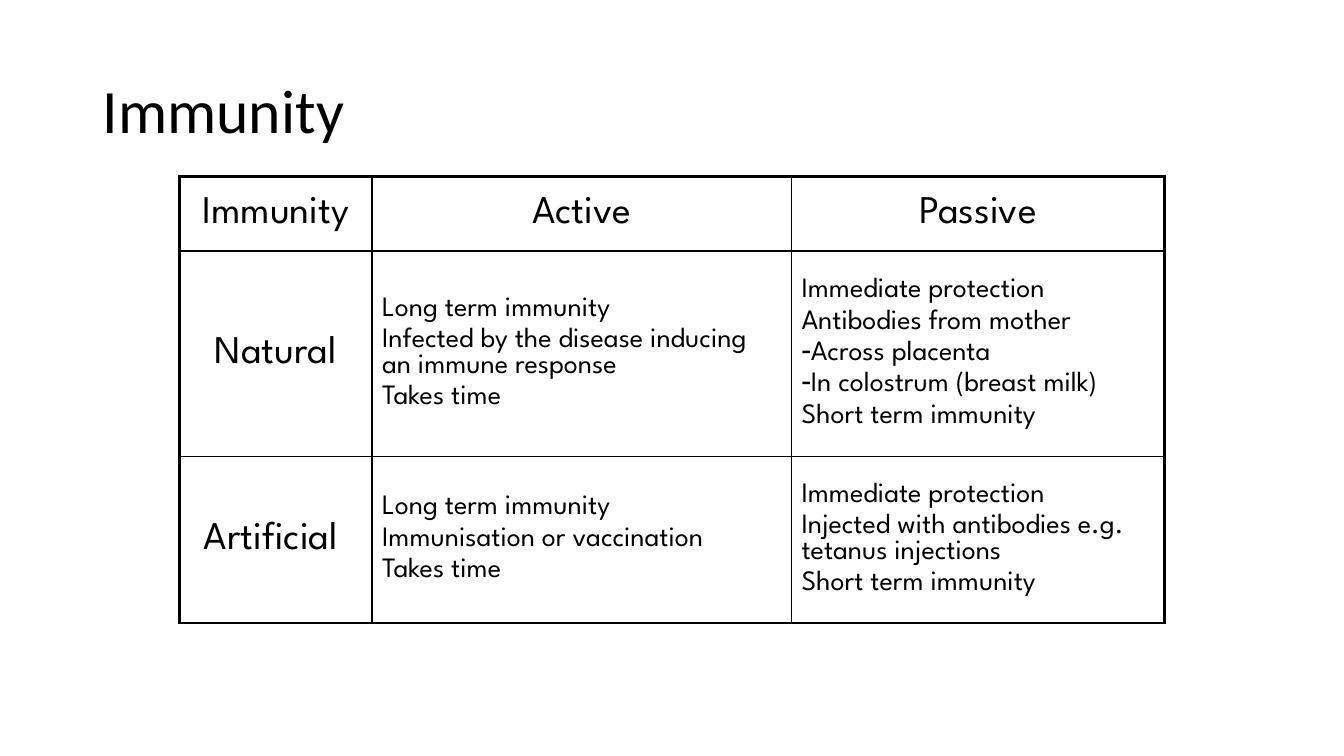
import pptx
import pptx.util
import pptx.dml.color
import pptx.enum.text
import pptx.oxml
import pptx.oxml.ns
import lxml.etree

Inches = pptx.util.Inches
Pt = pptx.util.Pt
ALIGN = pptx.enum.text.PP_ALIGN
MIDDLE = pptx.enum.text.MSO_ANCHOR.MIDDLE
COLOURS = {"text": "000000", "border": "000000"}
OUTER_WIDTH, INNER_WIDTH = 2.25, 1

column_widths = [1.91, 4.16, 3.7]
row_heights = [0.74, 2.04, 1.65]
# Each cell is a list of paragraphs; a leading "-" marks a bulleted one.
rows = [
    [["Immunity"], ["Active"], ["Passive"]],
    [
        ["Natural"],
        ["Long term immunity", "Infected by the disease inducing an immune response", "Takes time"],
        ["Immediate protection", "Antibodies from mother", "-Across placenta",
         "-In colostrum (breast milk)", "Short term immunity"],
    ],
    [
        ["Artificial "],
        ["Long term immunity", "Immunisation or vaccination", "Takes time"],
        ["Immediate protection", "Injected with antibodies e.g. tetanus injections",
         "Short term immunity"],
    ],
]


def add_text(paragraph, text, font_name, size):
    run = paragraph.add_run()
    run.text = text
    run.font.name = font_name
    run.font.size = Pt(size)
    run.font.bold = False
    run.font.color.rgb = pptx.dml.color.RGBColor.from_string(COLOURS["text"])


def set_borders(cell, widths):
    """Draw the borders, given in points by side; they must precede the cell's fill."""
    properties = cell._tc.get_or_add_tcPr()
    for position, (side, width) in enumerate(widths.items()):
        line = pptx.oxml.parse_xml(
            f'<a:ln{side} {pptx.oxml.ns.nsdecls("a")} w="{Pt(width)}"><a:solidFill>'
            f'<a:srgbClr val="{COLOURS["border"]}"/></a:solidFill></a:ln{side}>'
        )
        properties.insert(position, line)


presentation = pptx.Presentation()
presentation.slide_width = Inches(13.33)
presentation.slide_height = Inches(7.5)
slide = presentation.slides.add_slide(presentation.slide_layouts[5])

title = slide.shapes.title
title.left, title.top = Inches(0.92), Inches(0.4)
title.width, title.height = Inches(11.5), Inches(1.45)
title.text_frame.vertical_anchor = MIDDLE
title_paragraph = title.text_frame.paragraphs[0]
title_paragraph.alignment = ALIGN.LEFT
title_paragraph.line_spacing = 0.9
add_text(title_paragraph, "Immunity", "Calibri", 44)

table = slide.shapes.add_table(
    len(rows), len(column_widths), Inches(1.78), Inches(1.75),
    Inches(sum(column_widths)), Inches(sum(row_heights)),
).table
table.first_row = False
table.horz_banding = False
for column, width in zip(table.columns, column_widths):
    column.width = Inches(width)
for row, height in zip(table.rows, row_heights):
    row.height = Inches(height)

last_row, last_column = len(rows) - 1, len(column_widths) - 1
for row_index, row_cells in enumerate(rows):
    for column_index, lines in enumerate(row_cells):
        cell = table.cell(row_index, column_index)
        cell.vertical_anchor = MIDDLE
        cell.fill.background()
        on_edge = {
            "L": column_index == 0,
            "R": column_index == last_column,
            "T": row_index == 0,
            "B": row_index == last_row,
        }
        set_borders(cell, {side: OUTER_WIDTH if edge else INNER_WIDTH
                           for side, edge in on_edge.items()})

        is_heading = row_index == 0 or column_index == 0
        size = 28 if is_heading else 20
        for line_index, text in enumerate(lines):
            frame = cell.text_frame
            paragraph = frame.add_paragraph() if line_index else frame.paragraphs[0]
            paragraph.alignment = ALIGN.CENTER if is_heading else ALIGN.LEFT
            paragraph.space_before = Pt(size * 0.2)
            if text.startswith("-"):
                bullet = lxml.etree.SubElement(
                    paragraph._p.get_or_add_pPr(), pptx.oxml.ns.qn("a:buChar"))
                bullet.set("char", "-")
            add_text(paragraph, text.removeprefix("-"), "League Spartan", size)

presentation.save("out.pptx")
